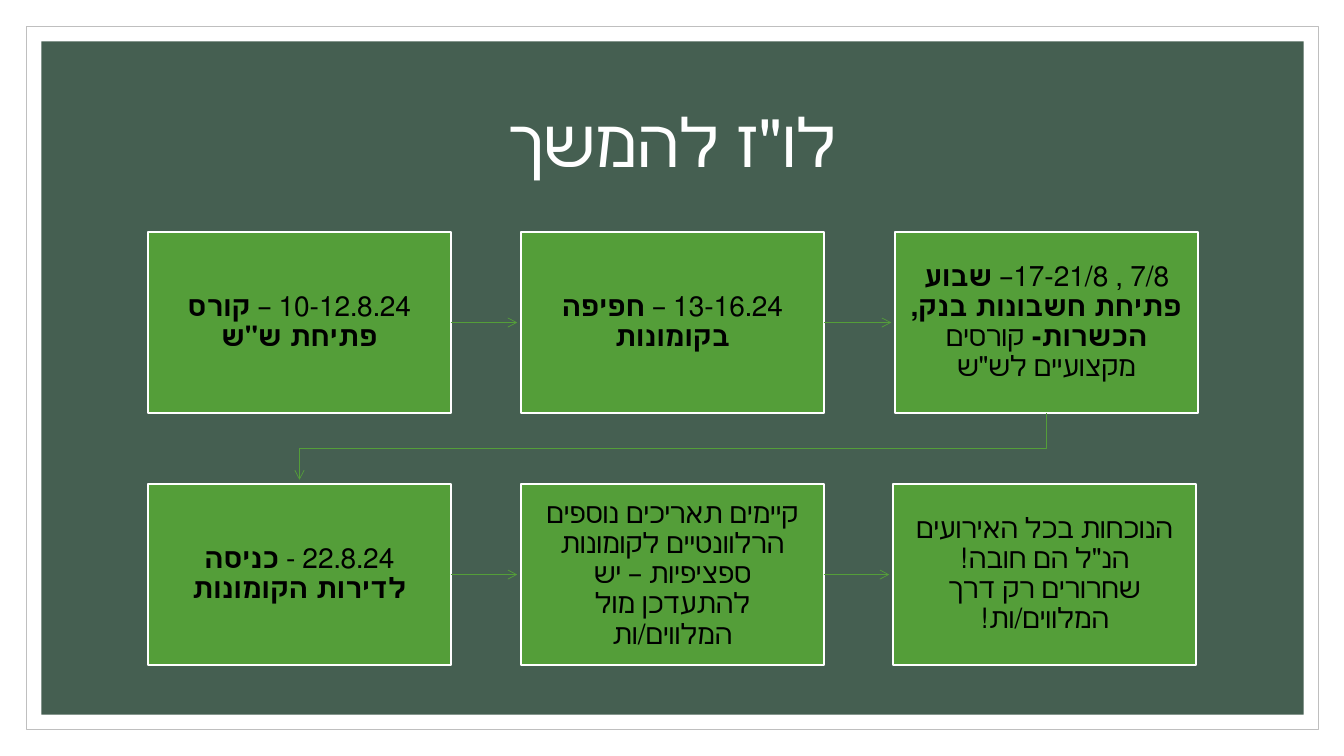
"""Build the Hebrew schedule slide: six boxes in two rows joined by arrows."""
from lxml.etree import SubElement
from pptx import Presentation
from pptx.dml.color import RGBColor
from pptx.enum.lang import MSO_LANGUAGE_ID
from pptx.enum.shapes import MSO_CONNECTOR, MSO_SHAPE
from pptx.enum.text import MSO_ANCHOR, PP_ALIGN
from pptx.oxml.ns import qn
from pptx.util import Inches, Pt

WHITE = RGBColor(0xFF, 0xFF, 0xFF)
BLACK = RGBColor(0, 0, 0)
GREY = RGBColor(0xBF, 0xBF, 0xBF)
DARK = RGBColor(0x45, 0x5F, 0x51)
GREEN = RGBColor(0x54, 0x9E, 0x39)

WIDE, HIGH, GAP = 3, 1.8, 0.04
ROWS = [
    (2.3, [1.47, 5.17, 8.88], [
        [("10-12.8.24 – ", False), ("קורס פתיחת ש\"ש", True)],
        [("13-16.24 – ", False), ("חפיפה בקומונות", True)],
        [("7/8 , 17-21/8– ", False),
         ("שבוע פתיחת חשבונות בנק, הכשרות- ", True),
         ("קורסים מקצועיים לש\"ש", False)],
    ]),
    (4.8, [1.47, 5.17, 8.86], [
        [("22.8.24 - ", False), ("כניסה לדירות הקומונות", True)],
        [("קיימים תאריכים נוספים הרלוונטיים לקומונות ספציפיות – "
          "יש להתעדכן מול המלווים/ות", False)],
        [("הנוכחות בכל האירועים הנ\"ל הם חובה! "
          "שחרורים רק דרך המלווים/ות!", False)],
    ]),
]


def write(frame, runs, size, color):
    frame.word_wrap = True
    frame.vertical_anchor = MSO_ANCHOR.MIDDLE
    para = frame.paragraphs[0]
    para.alignment = PP_ALIGN.CENTER
    para.line_spacing = 0.9
    para._p.get_or_add_pPr().set("rtl", "1")
    for text, bold in runs:
        run = para.add_run()
        run.text = text
        font = run.font
        font.name, font.size, font.bold = "Calibri", Pt(size), bold
        font.color.rgb = color
        font.language_id = MSO_LANGUAGE_ID.HEBREW
    return para


def point(arrow):
    arrow.line.color.rgb = GREEN
    arrow.line.width = Pt(0.5)
    props = arrow.element.spPr
    SubElement(props.find(qn("a:ln")), qn("a:tailEnd"), type="arrow")
    SubElement(props, qn("a:effectLst"))


deck = Presentation()
deck.slide_width, deck.slide_height = Inches(13.33), Inches(7.5)
slide = deck.slides.add_slide(deck.slide_layouts[5])
shapes = slide.shapes
slide.background.fill.solid()
slide.background.fill.fore_color.rgb = WHITE

for edge, wide, high, fill, line in [(0.26, 12.82, 6.98, WHITE, GREY),
                                     (0.41, 12.52, 6.68, DARK, None)]:
    panel = shapes.add_shape(MSO_SHAPE.RECTANGLE, Inches(edge), Inches(edge),
                             Inches(wide), Inches(high))
    panel.shadow.inherit = False
    panel.fill.solid()
    panel.fill.fore_color.rgb = fill
    if line:
        panel.line.color.rgb = line
        panel.line.width = Pt(0.5)
    else:
        panel.line.fill.background()

title = shapes.title
title.left, title.top = Inches(1.17), Inches(0.7)
title.width, title.height = Inches(11), Inches(1.5)
write(title.text_frame, [("לו\"ז להמשך", False)], 48, WHITE)
panel.element.addnext(title.element)

for top, lefts, texts in ROWS:
    for left, runs in zip(lefts, texts):
        box = shapes.add_shape(MSO_SHAPE.RECTANGLE, Inches(left), Inches(top),
                               Inches(WIDE), Inches(HIGH))
        box.shadow.inherit = False
        box.fill.solid()
        box.fill.fore_color.rgb = GREEN
        box.line.color.rgb = WHITE
        box.line.width = Pt(1.5)
        frame = box.text_frame
        frame.margin_left = frame.margin_right = Inches(0.15)
        frame.margin_top = frame.margin_bottom = Inches(0.15)
        write(frame, runs, 20, BLACK).space_after = Pt(7)
    mid = Inches(top + HIGH / 2)
    for left, right in zip(lefts, lefts[1:]):
        point(shapes.add_connector(MSO_CONNECTOR.STRAIGHT, Inches(left + WIDE),
                                   mid, Inches(right - GAP), mid))

start, end = Inches(10.38), Inches(2.97)
path = shapes.build_freeform(start, Inches(4.1))
path.add_line_segments([(start, Inches(4.45)), (end, Inches(4.45)),
                        (end, Inches(4.76))], close=False)
bend = path.convert_to_shape()
bend.fill.background()
point(bend)

deck.save("out.pptx")
